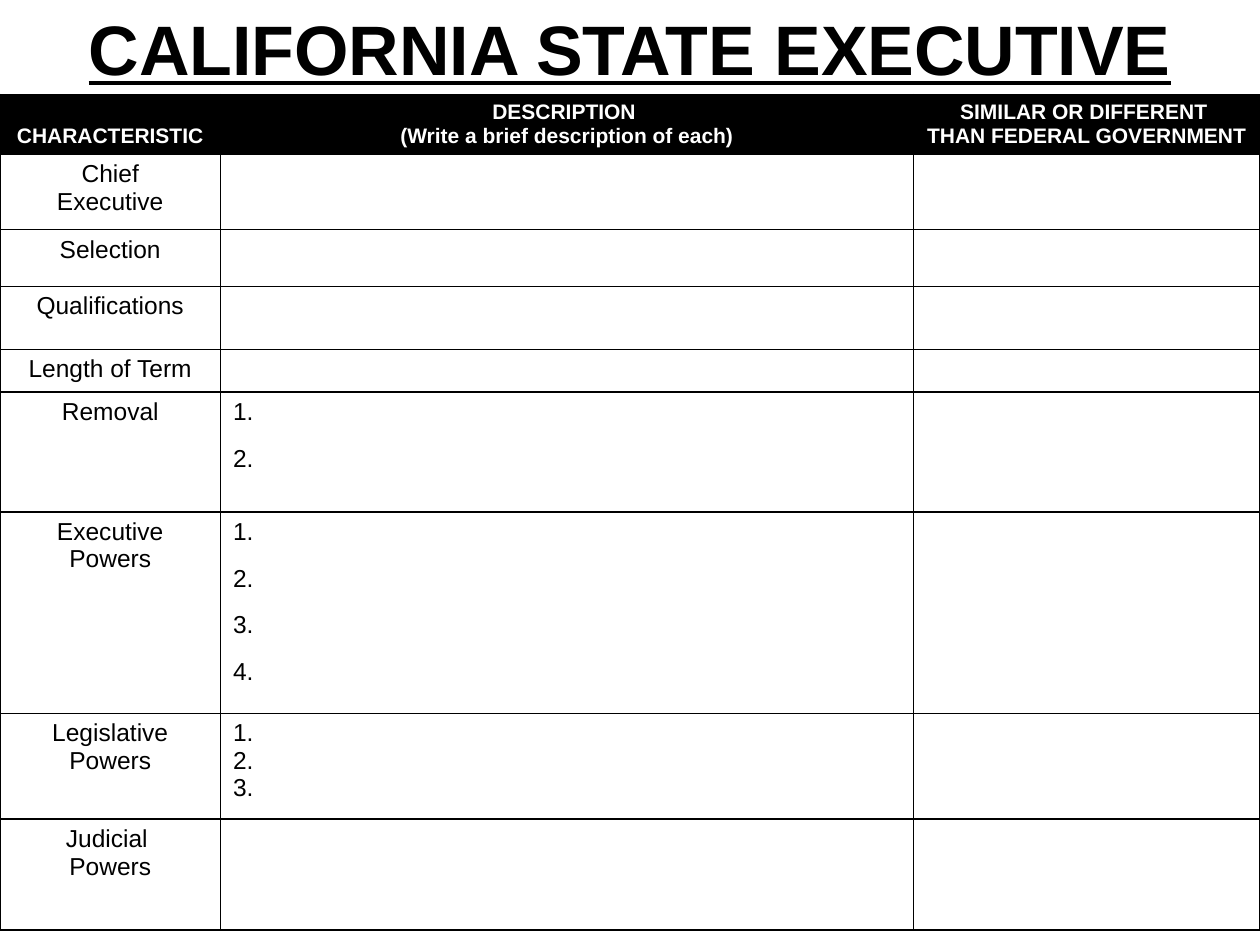
from lxml.etree import SubElement
from pptx import Presentation
from pptx.dml.color import RGBColor
from pptx.enum.text import MSO_ANCHOR, PP_ALIGN
from pptx.oxml.ns import qn
from pptx.util import Inches, Pt

COLORS = {"ink": "000000", "paper": "FFFFFF"}
FONT = "Arial"
COLUMNS = [1.75, 5.5, 2.75]
HEADERS = [
    "CHARACTERISTIC",
    "DESCRIPTION \n(Write a brief description of each)",
    "SIMILAR OR DIFFERENT \nTHAN FEDERAL GOVERNMENT",
]
HEADER_HEIGHT = 0.47
TOPICS = [
    ("Chief\nExecutive", 0, 0, 0.6),
    ("Selection", 0, 0, 0.45),
    ("Qualifications", 0, 0, 0.5),
    ("Length of Term", 0, 0, 0.34),
    ("Removal", 2, 11, 0.95),
    ("Executive\nPowers", 4, 11, 1.6),
    ("Legislative\nPowers", 3, 0, 0.84),
    ("Judicial \nPowers", 0, 0, 0.88),
]


def style_span(span, size, color, bold=False):
    """Give a run its font, size, colour and weight."""
    span.font.name = FONT
    span.font.size = Pt(size)
    span.font.bold = bold
    span.font.color.rgb = RGBColor.from_string(COLORS[color])


def outline_cell(cell):
    """Draw a thin border on all four sides of a cell."""
    properties = cell._tc.get_or_add_tcPr()
    for index, side in enumerate(("a:lnL", "a:lnR", "a:lnT", "a:lnB")):
        line = properties.makeelement(qn(side), {"w": str(Pt(1))})
        fill = SubElement(line, qn("a:solidFill"))
        SubElement(fill, qn("a:srgbClr"), val=COLORS["ink"])
        properties.insert(index, line)


def fill_cell(cell, text, size, color="ink", bold=False, align=PP_ALIGN.CENTER, gap=0):
    """Write text in a cell, one paragraph a line, with a gap between lines."""
    cell.text_frame.text = text
    for index, para in enumerate(cell.text_frame.paragraphs):
        para.alignment = align
        para.space_before = Pt(gap if index else 0)
        for span in para.runs:
            style_span(span, size, color, bold)
        if not para.runs:
            SubElement(para._p, qn("a:endParaRPr"), sz=str(size * 100))
    if color == "paper":
        cell.fill.solid()
        cell.fill.fore_color.rgb = RGBColor.from_string(COLORS["ink"])
    else:
        cell.fill.background()
    outline_cell(cell)


def add_heading(page, left, top, width, height):
    """Place the underlined title in the given box."""
    title = page.shapes.title
    title.left, title.top, title.width, title.height = left, top, width, height
    title.text_frame.text = "CALIFORNIA STATE EXECUTIVE"
    title.text_frame.vertical_anchor = MSO_ANCHOR.MIDDLE
    para = title.text_frame.paragraphs[0]
    para.alignment = PP_ALIGN.CENTER
    style_span(para.runs[0], 40, "ink", True)
    para.runs[0].font.underline = True


def add_worksheet(page, left, top, width, height):
    """Place the table of topics in the given box."""
    heights = [HEADER_HEIGHT] + [topic[3] for topic in TOPICS]
    frame = page.shapes.add_table(len(heights), len(COLUMNS), left, top, width, height)
    table = frame.table
    table.first_row = table.horz_banding = False
    for column, share in zip(table.columns, COLUMNS):
        column.width = int(width * share / sum(COLUMNS))
    for row, share in zip(table.rows, heights):
        row.height = int(height * share / sum(heights))
    for column, text in enumerate(HEADERS):
        fill_cell(table.cell(0, column), text, 12, "paper", True)
    table.cell(0, 0).vertical_anchor = MSO_ANCHOR.BOTTOM
    for row, (topic, count, gap, _) in enumerate(TOPICS, 1):
        numbers = "\n".join(f"{number}." for number in range(1, count + 1))
        fill_cell(table.cell(row, 0), topic, 14)
        fill_cell(table.cell(row, 1), numbers, 14, align=PP_ALIGN.LEFT, gap=gap)
        fill_cell(table.cell(row, 2), "", 14)


def main():
    """Build the worksheet slide and save it."""
    deck = Presentation()
    deck.slide_width, deck.slide_height = Inches(10), Inches(7.5)
    width, height = deck.slide_width, deck.slide_height
    page = deck.slides.add_slide(deck.slide_layouts[5])
    top = int(height * 0.1)
    add_worksheet(page, 0, top, width, Inches(HEADER_HEIGHT + sum(topic[3] for topic in TOPICS)))
    add_heading(page, 0, 0, width, top)
    deck.save("out.pptx")


if __name__ == "__main__":
    main()
